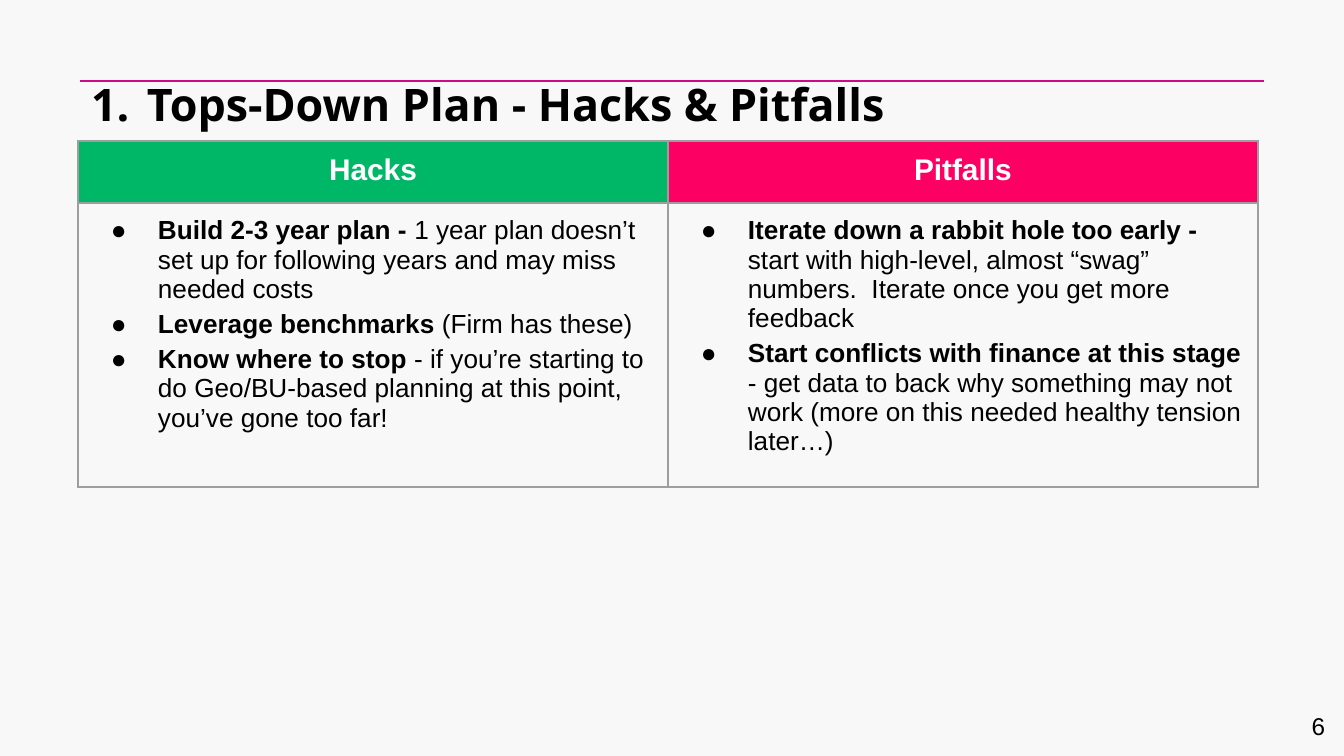
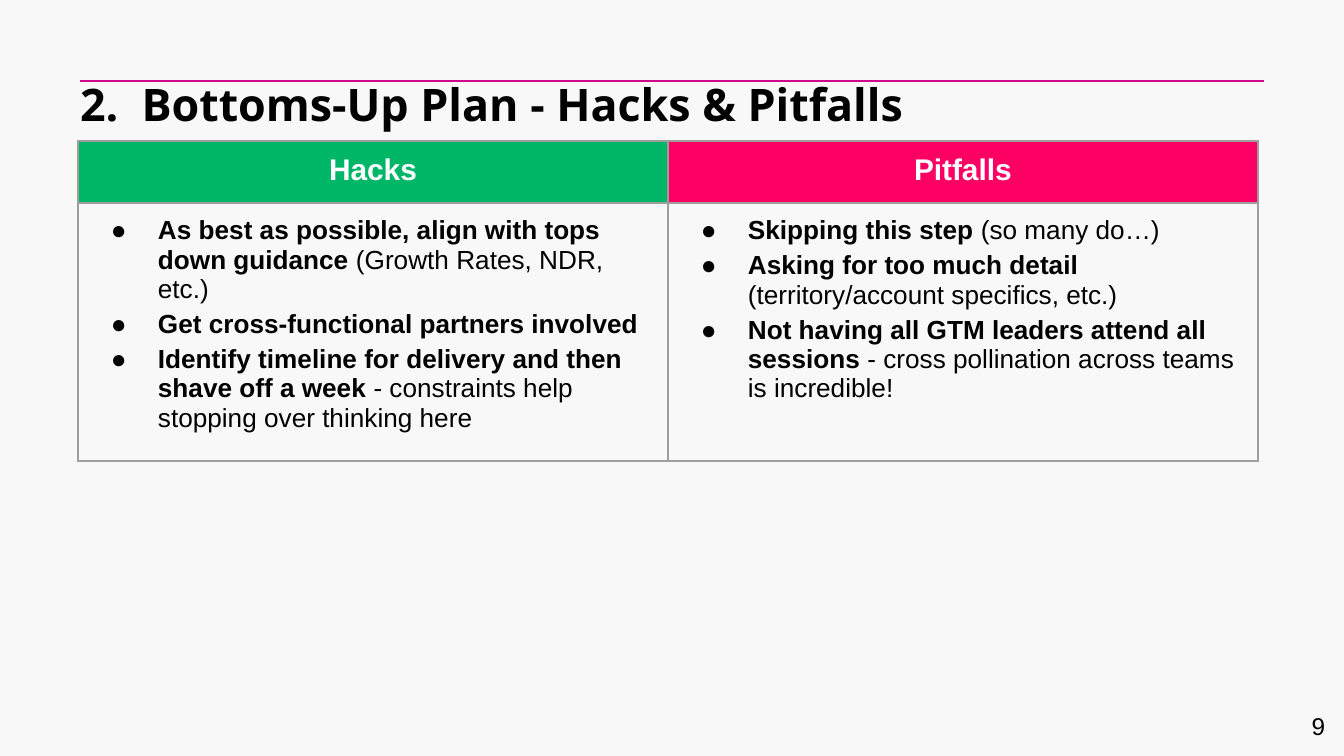
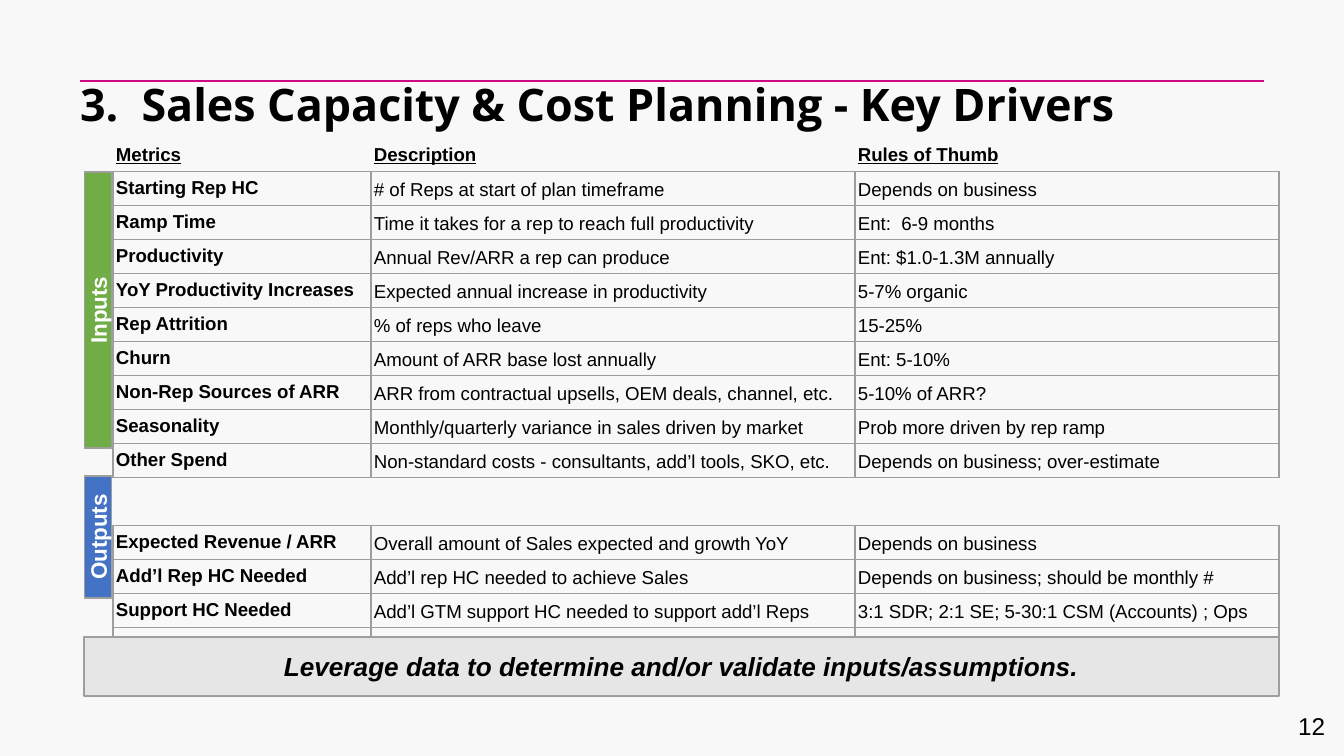
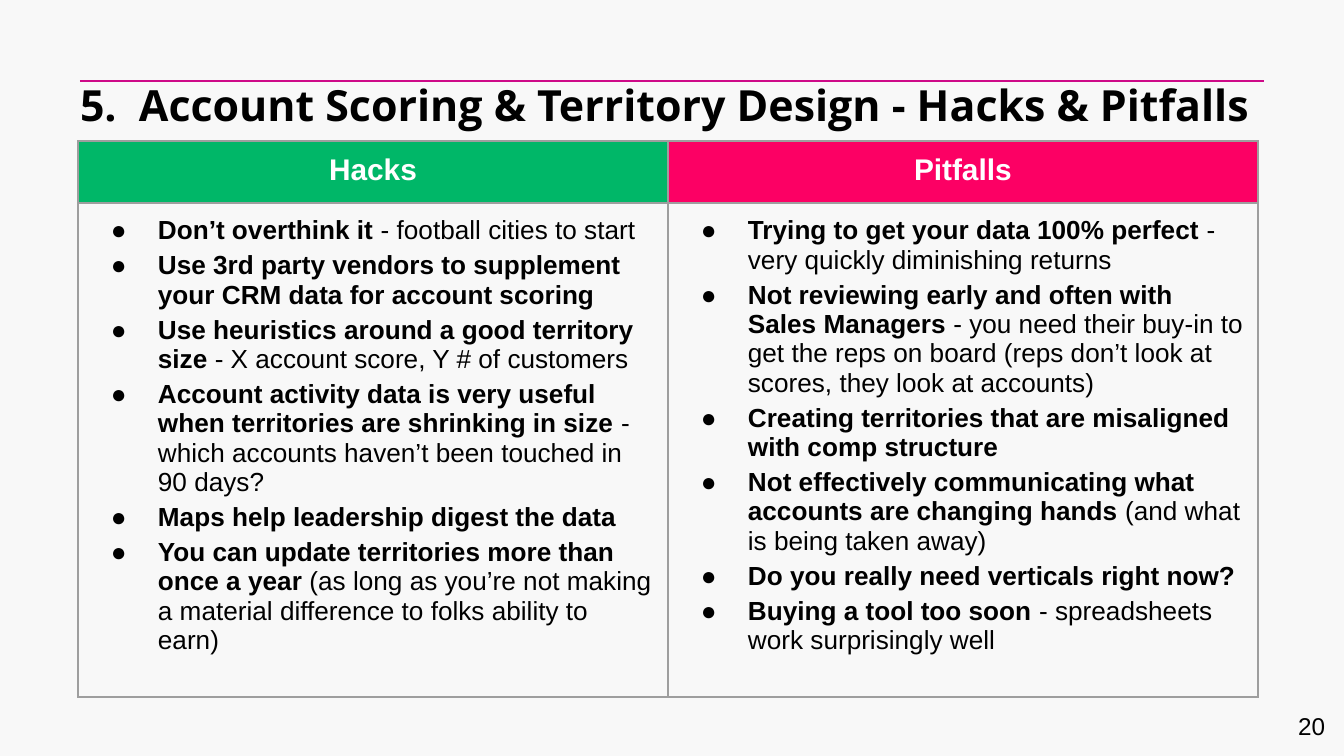
from lxml import etree
from pptx import Presentation
from pptx import util as u
from pptx.dml import color
from pptx.enum import shapes, text
from pptx.oxml import ns

PX = 914400 / 134.4
BLACK, WHITE, GREY = "000000", "FFFFFF", "9E9E9E"
PAPER, MAGENTA, SILVER = "F8F8F8", "CE0A88", "E7E6E6"
HACK_GREEN, PITFALL_PINK = "00B768", "FC0064"
INPUT_GREEN, OUTPUT_BLUE = "70AD47", "4472C4"
SIDES = ("lnL", "lnR", "lnT", "lnB")
LEFT, MIDDLE = text.PP_ALIGN.LEFT, text.MSO_ANCHOR.MIDDLE
CENTER, RIGHT = text.PP_ALIGN.CENTER, text.PP_ALIGN.RIGHT

TOPS_DOWN = (
    [("Build 2-3 year plan - ", "1 year plan doesn’t set up for following years and may miss needed costs"),
     ("Leverage benchmarks ", "(Firm has these)"),
     ("Know where to stop", " - if you’re starting to do Geo/BU-based planning at this point, "
      "you’ve gone too far!")],
    [("Iterate down a rabbit hole too early - ", "start with high-level, almost “swag” numbers.  "
      "Iterate once you get more feedback"),
     ("Start conflicts with finance at this stage ", "- get data to back why something may not work "
      "(more on this needed healthy tension later…)")],
)
BOTTOMS_UP = (
    [("As best as possible, align with tops down guidance ", "(Growth Rates, NDR, etc.)"),
     ("Get cross-functional partners involved", ""),
     ("Identify timeline for delivery and then shave off a week",
      " - constraints help stopping over thinking here")],
    [("Skipping this step", " (so many do…)"),
     ("Asking for too much detail ", "(territory/account specifics, etc.)"),
     ("Not having all GTM leaders attend all sessions ", "- cross pollination across teams is incredible!")],
)
TERRITORY = (
    [("Don’t overthink it ", "- football cities to start"),
     ("Use 3rd party vendors to supplement your CRM data for account scoring", ""),
     ("Use heuristics around a good territory size ", "- X account score, Y # of customers"),
     ("Account activity data is very useful when territories are shrinking in size",
      " - which accounts haven’t been touched in 90 days?"),
     ("Maps help leadership digest the data", ""),
     ("You can update territories more than once a year",
      " (as long as you’re not making a material difference to folks ability to earn)")],
    [("Trying to get your data 100% perfect ", "- very quickly diminishing returns"),
     ("Not reviewing early and often with Sales Managers ", "- you need their buy-in to get the reps "
      "on board (reps don’t look at scores, they look at accounts)"),
     ("Creating territories that are misaligned with comp structure", ""),
     ("Not effectively communicating what accounts are changing hands", " (and what is being taken away)"),
     ("Do you really need verticals right now?", ""),
     ("Buying a tool too soon ", "- spreadsheets work surprisingly well")],
)
BLANK_ROW = ("", "", "")
DRIVERS = [
    ("Metrics", "Description", "Rules of Thumb"),
    ("Starting Rep HC", "# of Reps at start of plan timeframe", "Depends on business"),
    ("Ramp Time", "Time it takes for a rep to reach full productivity", "Ent:  6-9 months"),
    ("Productivity", "Annual Rev/ARR a rep can produce", "Ent: $1.0-1.3M annually"),
    ("YoY Productivity Increases", "Expected annual increase in productivity", "5-7% organic"),
    ("Rep Attrition", "% of reps who leave", "15-25%"),
    ("Churn", "Amount of ARR base lost annually", "Ent: 5-10%"),
    ("Non-Rep Sources of ARR", "ARR from contractual upsells, OEM deals, channel, etc.", "5-10% of ARR?"),
    ("Seasonality", "Monthly/quarterly variance in sales driven by market", "Prob more driven by rep ramp"),
    ("Other Spend", "Non-standard costs - consultants, add’l tools, SKO, etc.",
     "Depends on business; over-estimate"),
    BLANK_ROW,
    ("Expected Revenue / ARR", "Overall amount of Sales expected and growth YoY", "Depends on business"),
    ("Add’l Rep HC Needed", "Add’l rep HC needed to achieve Sales", "Depends on business; should be monthly #"),
    ("Support HC Needed", "Add’l GTM support HC needed to support add’l Reps",
     "3:1 SDR; 2:1 SE; 5-30:1 CSM (Accounts) ; Ops"),
    BLANK_ROW,
]
SPACER = 10


def px(value):
    return u.Emu(round(value * PX))


def rgb(value):
    return color.RGBColor.from_string(value)


def apply(target, formats):
    for name, value in formats.items():
        setattr(target, name, value)


def margins(x, y):
    return {"margin_left": px(x), "margin_right": px(x), "margin_top": px(y), "margin_bottom": px(y)}


def add_span(para, words, size, ink=BLACK, **formats):
    span = para.add_run()
    span.text = words
    apply(span.font, {"name": "Arial", "size": u.Pt(size), **formats})
    span.font.color.rgb = rgb(ink)


def add_bullet(para, indent, hanging, size, font, tag, **attributes):
    properties = para._p.get_or_add_pPr()
    properties.set("marL", str(px(indent)))
    properties.set("indent", str(-px(hanging)))
    ink = etree.SubElement(properties, ns.qn("a:buClr"))
    etree.SubElement(ink, ns.qn("a:srgbClr"), val=BLACK)
    etree.SubElement(properties, ns.qn("a:buSzPts"), val=str(size * 100))
    etree.SubElement(properties, ns.qn("a:buFont"), typeface=font)
    etree.SubElement(properties, ns.qn(tag), **attributes)


def set_borders(cell, drawn=SIDES):
    properties = cell._tc.get_or_add_tcPr()
    for side in SIDES:
        line = etree.SubElement(properties, ns.qn(f"a:{side}"), w=str(u.Pt(0.75)))
        if side in drawn:
            fill = etree.SubElement(line, ns.qn("a:solidFill"))
            etree.SubElement(fill, ns.qn("a:srgbClr"), val=GREY)
        else:
            etree.SubElement(line, ns.qn("a:noFill"))


def add_grid(page, left, top, widths, heights):
    frame = page.shapes.add_table(len(heights), len(widths), px(left), px(top),
                                  px(sum(widths)), px(sum(heights)))
    table = frame.table
    apply(table, {"first_row": False, "horz_banding": False})
    for column, width in zip(table.columns, widths):
        column.width = px(width)
    for row, height in zip(table.rows, heights):
        row.height = px(height)
    return table


def add_page(deck, title, number, size=24, numbered=False):
    page = deck.slides.add_slide(deck.slide_layouts[5])
    rule = page.shapes.add_connector(shapes.MSO_CONNECTOR.STRAIGHT, px(80), px(81), px(1264), px(81))
    rule.line.color.rgb = rgb(MAGENTA)
    rule.line.width = u.Pt(1)
    etree.SubElement(rule._element.spPr, ns.qn("a:effectLst"))

    heading = page.shapes.title
    apply(heading, {"left": px(80), "top": px(77), "width": px(1185), "height": px(54)})
    apply(heading.text_frame, {**margins(0, 0), "vertical_anchor": MIDDLE, "word_wrap": True,
                               "auto_size": text.MSO_AUTO_SIZE.NONE})
    para = heading.text_frame.paragraphs[0]
    para.alignment = LEFT
    if numbered:
        add_bullet(para, 67, 56, size, "Open Sans", "a:buAutoNum", type="arabicPeriod")
    add_span(para, title, size, name="Open Sans", bold=True)

    box = page.shapes.add_textbox(px(1258), px(698), px(80), px(58))
    apply(box.text_frame, {**margins(13, 13), "word_wrap": True})
    para = box.text_frame.paragraphs[0]
    para.alignment = RIGHT
    add_span(para, number, 13)
    return page


def add_bar(page, left, top, width, height, fill, words, size, ink, rotation=0, **formats):
    bar = page.shapes.add_shape(shapes.MSO_SHAPE.RECTANGLE, px(left), px(top), px(width), px(height))
    bar.shadow.inherit = False
    bar.rotation = rotation
    bar.fill.solid()
    bar.fill.fore_color.rgb = rgb(fill)
    bar.line.color.rgb = rgb(GREY)
    bar.line.width = u.Pt(0.75)
    apply(bar.text_frame, {**margins(0, 0), "vertical_anchor": MIDDLE, "word_wrap": True})
    para = bar.text_frame.paragraphs[0]
    para.alignment = CENTER
    add_span(para, words, size, ink, bold=True, **formats)


def add_side_label(page, top, length, fill, words):
    center_x, thickness = 98, 27
    add_bar(page, center_x - length / 2, top + (length - thickness) / 2, length, thickness,
            fill, words, 12, WHITE, rotation=270)


def fill_points(cell, points):
    for index, (lead, detail) in enumerate(points):
        para = cell.text_frame.paragraphs[0] if index == 0 else cell.text_frame.add_paragraph()
        add_bullet(para, 67, 47, 14, "Arial", "a:buChar", char="●")
        if index:
            para.space_before = u.Pt(3)
        add_span(para, lead, 14, bold=True)
        if detail:
            add_span(para, detail, 14, bold=False)
    para.space_after = u.Pt(3)


def add_hacks_and_pitfalls(page, columns, body_height):
    table = add_grid(page, 78, 141, [590, 590], [62, body_height])
    headers = (("Hacks", HACK_GREEN), ("Pitfalls", PITFALL_PINK))
    for index, ((label, fill), points) in enumerate(zip(headers, columns)):
        header, body = table.cell(0, index), table.cell(1, index)
        for cell in (header, body):
            set_borders(cell)
            apply(cell, margins(13, 13))
        header.fill.solid()
        header.fill.fore_color.rgb = rgb(fill)
        body.fill.background()
        para = header.text_frame.paragraphs[0]
        para.alignment = CENTER
        add_span(para, label, 16, WHITE, bold=True)
        fill_points(body, points)


def add_drivers(page):
    heights = [34] * len(DRIVERS)
    heights[0], heights[SPACER] = 30, 48
    table = add_grid(page, 113, 141, [258, 484, 424], heights)
    open_sides = {0: ("lnB",), SPACER: ("lnT", "lnB")}
    for row, values in enumerate(DRIVERS):
        for column, words in enumerate(values):
            cell = table.cell(row, column)
            set_borders(cell, open_sides.get(row, SIDES))
            cell.fill.background()
            apply(cell, {**margins(3, 4), "vertical_anchor": MIDDLE if row else text.MSO_ANCHOR.TOP})
            if not words:
                continue
            para = cell.text_frame.paragraphs[0]
            if row and column:
                para.line_spacing = 1.15
            add_span(para, words, 10, bold=row == 0 or column == 0, underline=row == 0)


def main():
    deck = Presentation()
    apply(deck, {"slide_width": px(1344), "slide_height": px(756)})
    backdrop = deck.slide_master.background.fill
    backdrop.solid()
    backdrop.fore_color.rgb = rgb(PAPER)

    page = add_page(deck, "Tops-Down Plan - Hacks & Pitfalls", "6", numbered=True)
    add_hacks_and_pitfalls(page, TOPS_DOWN, 284)

    page = add_page(deck, "2.  Bottoms-Up Plan - Hacks & Pitfalls", "9")
    add_hacks_and_pitfalls(page, BOTTOMS_UP, 258)

    page = add_page(deck, "3.  Sales Capacity & Cost Planning - Key Drivers", "12")
    add_drivers(page)
    add_side_label(page, 476, 122, OUTPUT_BLUE, "Outputs")
    add_bar(page, 84, 637, 1195, 59, SILVER,
            "Leverage data to determine and/or validate inputs/assumptions.", 14, BLACK, italic=True)
    add_side_label(page, 172, 276, INPUT_GREEN, "Inputs")

    page = add_page(deck, "5.  Account Scoring & Territory Design - Hacks & Pitfalls", "20", size=23)
    add_hacks_and_pitfalls(page, TERRITORY, 494)

    deck.save("out.pptx")


if __name__ == "__main__":
    main()
